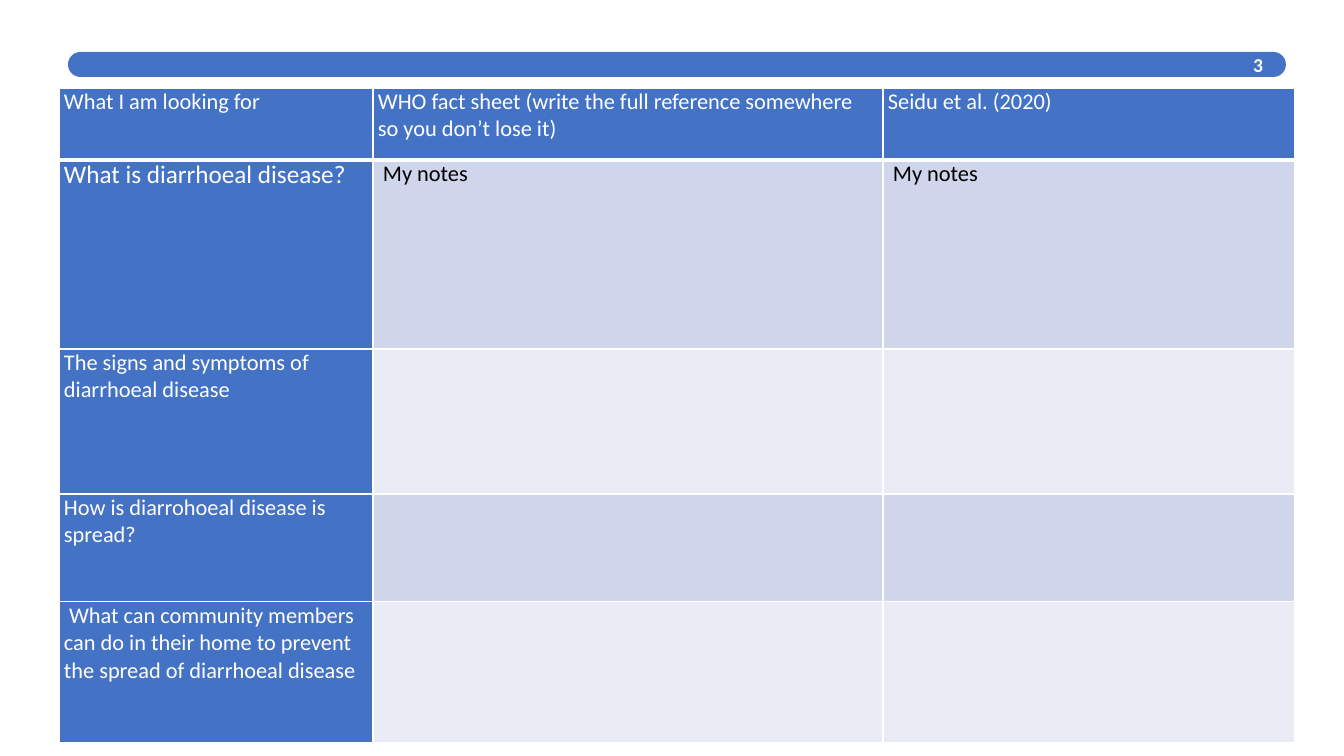
"""Build the note-taking grid slide on diarrhoeal disease."""
from lxml import etree
from pptx import Presentation
from pptx import util as u
from pptx.dml.color import RGBColor
from pptx.enum import shapes, text
from pptx.oxml.ns import qn

SCALE = 914400 / 100.8
FONT = "Calibri"
WHITE, BLACK, BLUE = "FFFFFF", "000000", "4472C4"
BANDS = ("CFD5EA", "E9EBF5")
PAGE_SIZE = (1344, 756)
BAR = (68, 52, 1218, 25)
NUMBER = (1211, 52, 62, 25)
GRID_ORIGIN = (59, 88)
COLUMNS = (314, 510, 412)
ROWS = (72, 189, 145, 108, 141)
CELLS = [
    ("What I am looking for",
     "WHO fact sheet (write the full reference somewhere so you don’t lose it)",
     "Seidu et al. (2020)"),
    ("What is diarrhoeal disease?", " My notes", " My notes"),
    ("The signs and symptoms of diarrhoeal disease", "", ""),
    ("How is diarrohoeal disease is spread?", "", ""),
    (" What can community members can do in their home to prevent "
     "the spread of diarrhoeal disease", "", ""),
]
LARGE_CELL = (1, 0)


def px(*lengths):
    return [u.Emu(round(length * SCALE)) for length in lengths]


def color(value):
    return RGBColor.from_string(value)


def write(para, words, size, ink, bold=False):
    span = para.add_run()
    span.text = words
    span.font.name = FONT
    span.font.size = u.Pt(size)
    span.font.bold = bold
    span.font.color.rgb = color(ink)


def add_borders(cell, bottom):
    properties = cell._tc.get_or_add_tcPr()
    for side, width in (("L", 1), ("R", 1), ("T", 1), ("B", bottom)):
        line = etree.SubElement(properties, qn(f"a:ln{side}"), w=str(u.Pt(width)))
        fill = etree.SubElement(line, qn("a:solidFill"))
        etree.SubElement(fill, qn("a:srgbClr"), val=WHITE)


def add_header_bar(page):
    bar = page.shapes.add_shape(shapes.MSO_SHAPE.ROUNDED_RECTANGLE, *px(*BAR))
    bar.adjustments[0] = 0.5
    bar.shadow.inherit = False
    bar.fill.solid()
    bar.fill.fore_color.rgb = color(BLUE)
    bar.line.fill.background()

    box = page.shapes.add_textbox(*px(*NUMBER))
    frame = box.text_frame
    frame.word_wrap = True
    frame.margin_top = frame.margin_bottom = 0
    frame.vertical_anchor = text.MSO_ANCHOR.MIDDLE
    para = frame.paragraphs[0]
    para.alignment = text.PP_ALIGN.RIGHT
    write(para, "3", 14, WHITE, bold=True)


def add_grid(page):
    area = px(*GRID_ORIGIN, sum(COLUMNS), sum(ROWS))
    table = page.shapes.add_table(len(ROWS), len(COLUMNS), *area).table
    table.first_row = table.horz_banding = False
    for column, width in zip(table.columns, px(*COLUMNS)):
        column.width = width
    for row, height in zip(table.rows, px(*ROWS)):
        row.height = height
    for i, entries in enumerate(CELLS):
        for j, words in enumerate(entries):
            cell = table.cell(i, j)
            heading = i == 0 or j == 0
            cell.margin_left = cell.margin_right = px(5)[0]
            cell.margin_top = cell.margin_bottom = 0
            add_borders(cell, bottom=3 if i == 0 else 1)
            cell.fill.solid()
            cell.fill.fore_color.rgb = color(BLUE if heading else BANDS[(i - 1) % 2])
            if words:
                size = 18 if (i, j) == LARGE_CELL else 16
                ink = WHITE if heading else BLACK
                write(cell.text_frame.paragraphs[0], words, size, ink)


def main():
    deck = Presentation()
    deck.slide_width, deck.slide_height = px(*PAGE_SIZE)
    page = deck.slides.add_slide(deck.slide_layouts[6])
    add_header_bar(page)
    add_grid(page)
    deck.save("out.pptx")


if __name__ == "__main__":
    main()
